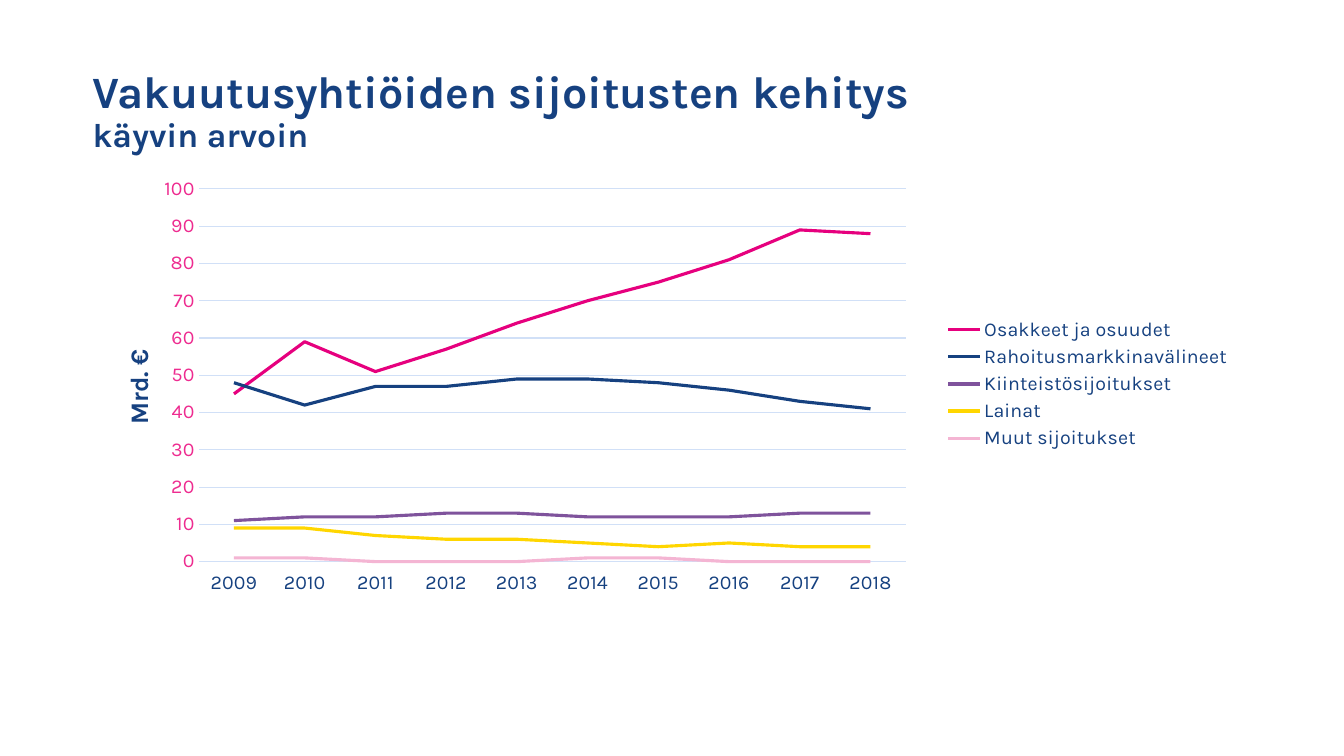
from lxml import etree
from pptx import Presentation
from pptx import util as u
from pptx.chart.data import CategoryChartData
from pptx.dml.color import RGBColor
from pptx.enum import chart as ch, text
from pptx.oxml.ns import qn

PX = 9144  # EMU per px, 100 px to the inch
FONT = "Karla"
NAVY = RGBColor(0x16, 0x41, 0x80)
PINK = RGBColor(0xEE, 0x2C, 0x90)
GRID = RGBColor(0xD1, 0xE0, 0xF7)
MAGENTA = RGBColor(0xE6, 0x00, 0x7E)
PURPLE = RGBColor(0x7F, 0x53, 0x9C)
YELLOW = RGBColor(0xFF, 0xD6, 0x00)
ROSE = RGBColor(0xF4, 0xB5, 0xD3)

SERIES = [
    ("Osakkeet ja osuudet", MAGENTA, [45, 59, 51, 57, 64, 70, 75, 81, 89, 88]),
    ("Rahoitusmarkkinavälineet", NAVY, [48, 42, 47, 47, 49, 49, 48, 46, 43, 41]),
    ("Kiinteistösijoitukset", PURPLE, [11, 12, 12, 13, 13, 12, 12, 12, 13, 13]),
    ("Lainat", YELLOW, [9, 9, 7, 6, 6, 5, 4, 5, 4, 4]),
    ("Muut sijoitukset", ROSE, [1, 1, 0, 0, 0, 1, 1, 0, 0, 0]),
]


def box(*sides):
    return [u.Emu(side * PX) for side in sides]


def style(font, size, color, bold=False):
    font.name = FONT
    font.size = u.Pt(size)
    font.color.rgb = color
    font.bold = bold


def stroke(line, color, width):
    line.color.rgb = color
    line.width = u.Pt(width)


def place(part, index, **spots):
    """Give a chart part a manual layout, in fractions of the chart."""
    layout = part.find(qn("c:layout"))
    if layout is None:
        layout = etree.Element(qn("c:layout"))
    part.insert(index, layout)
    manual = etree.SubElement(layout, qn("c:manualLayout"))
    if "w" in spots:
        etree.SubElement(manual, qn("c:layoutTarget")).set("val", "inner")
    for side in "xy":
        etree.SubElement(manual, qn(f"c:{side}Mode")).set("val", "edge")
    for side, value in spots.items():
        etree.SubElement(manual, qn(f"c:{side}")).set("val", str(value))


def add_title(slide):
    frame = slide.shapes.add_textbox(*box(82, 39, 1150, 145)).text_frame
    frame.word_wrap = True
    frame.vertical_anchor = text.MSO_ANCHOR.MIDDLE
    para = frame.paragraphs[0]
    para.line_spacing = 0.9
    head = para.add_run()
    head.text = "Vakuutusyhtiöiden sijoitusten kehitys"
    style(head.font, 32, NAVY, True)
    para.add_line_break()
    sub = para.add_run()
    sub.text = "käyvin arvoin"
    style(sub.font, 24, NAVY, True)


def set_axes(chart):
    years, values = chart.category_axis, chart.value_axis
    for axis, color in ((years, NAVY), (values, PINK)):
        axis.major_tick_mark = axis.minor_tick_mark = ch.XL_TICK_MARK.NONE
        style(axis.tick_labels.font, 14, color)
    years.tick_label_position = ch.XL_TICK_LABEL_POSITION.LOW
    stroke(years.format.line, GRID, 0.75)

    values.minimum_scale, values.maximum_scale = 0, 100
    values.major_unit = 10
    values.tick_labels.number_format = "0"
    values.tick_labels.number_format_is_linked = False
    values.format.line.fill.background()
    values.has_major_gridlines = True
    stroke(values.major_gridlines.format.line, GRID, 0.75)

    title = values.axis_title
    run = title.text_frame.paragraphs[0].add_run()
    run.text = "Mrd. €"
    style(run.font, 18, NAVY, True)
    place(title._element, 1, x=0.03, y=0.41)


def add_lines(slide):
    data = CategoryChartData(number_format="0")
    data.categories = [str(year) for year in range(2009, 2019)]
    for name, _, values in SERIES:
        data.add_series(name, values)
    chart = slide.shapes.add_chart(
        ch.XL_CHART_TYPE.LINE, *box(82, 166, 1150, 430), data).chart
    style(chart.font, 14, NAVY)
    chart.has_title = False
    chart.has_legend = True
    chart.legend.position = ch.XL_LEGEND_POSITION.RIGHT
    chart.legend.include_in_layout = False
    style(chart.legend.font, 14, NAVY)

    plot = chart.plots[0]
    plot.vary_by_categories = False
    for line, (_, color, _) in zip(plot.series, SERIES):
        line.smooth = False
        line.marker.style = ch.XL_MARKER_STYLE.NONE
        stroke(line.format.line, color, 2.25)
    set_axes(chart)
    place(chart._chartSpace.chart.plotArea, 0, x=0.1, y=0.05, w=0.61, h=0.86)


def main():
    deck = Presentation()
    deck.slide_width, deck.slide_height = box(1333, 750)
    slide = deck.slides.add_slide(deck.slide_layouts[6])
    add_title(slide)
    add_lines(slide)
    deck.save("out.pptx")


if __name__ == "__main__":
    main()
